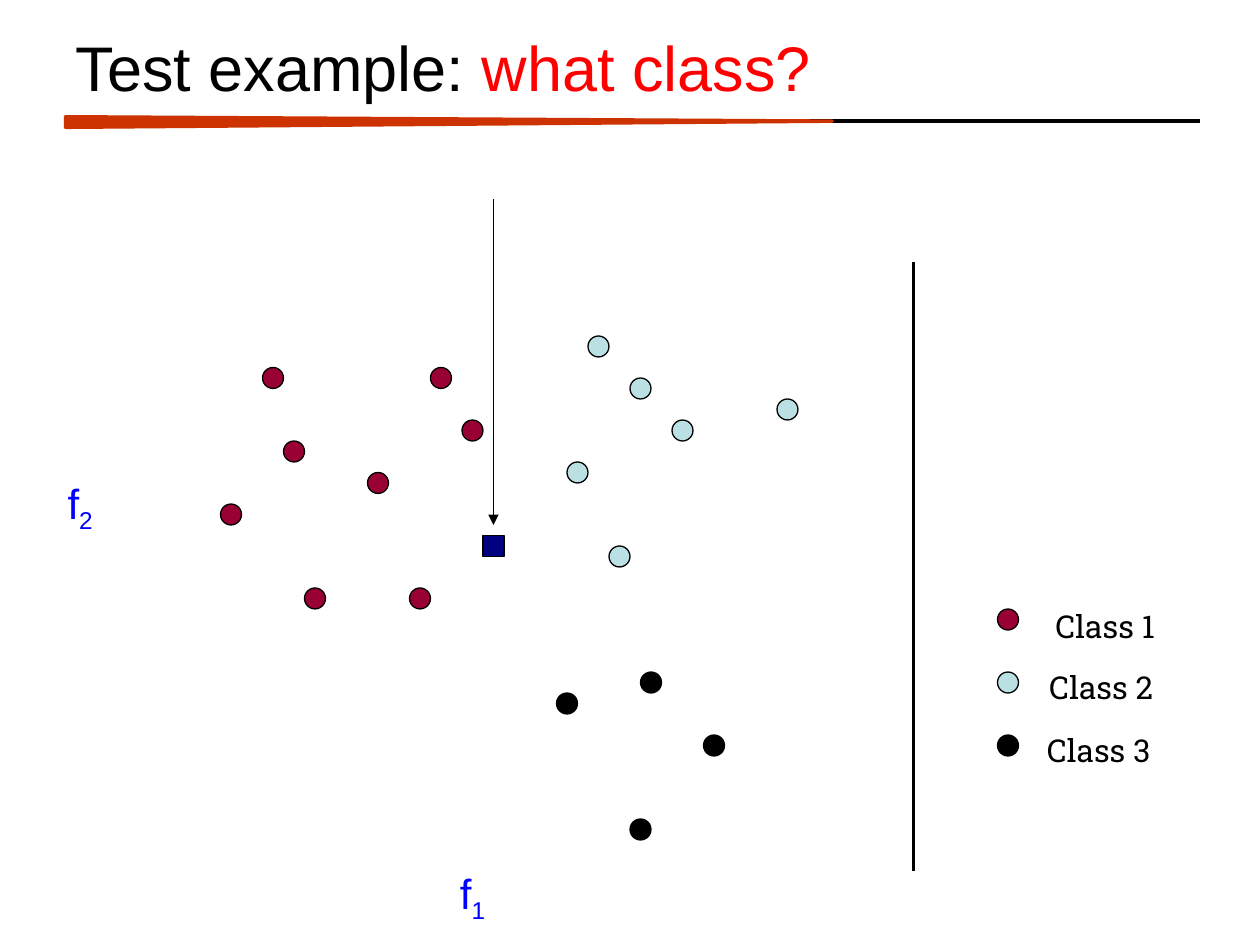
from dataclasses import dataclass

from lxml import etree
from pptx import Presentation
from pptx import util as u
from pptx.dml.color import RGBColor
from pptx.enum import shapes, text
from pptx.oxml.ns import qn

PX = u.Inches(1) // 96
CELL = 8
DOT = 2 * CELL


@dataclass(frozen=True)
class Theme:
    """Colours, fonts and sizes of the deck."""
    ink: str = "000000"
    question: str = "FF0000"
    wedge: str = "CC3300"
    axis: str = "0000FF"
    test: str = "000080"
    classes: tuple = ("990033", "BBE0E3", "000000")
    sans: str = "Arial"
    slab: str = "Roboto Slab"
    title_size: int = 36
    axis_size: int = 24
    legend_size: int = 18
    thin: float = 0.75
    rule: float = 2
    divider: float = 2.25


THEME = Theme()

POINTS = (
    ((4, 16), (6, 23), (8, 37), (20, 16), (0, 29), (14, 26), (23, 21), (18, 37)),
    ((33, 25), (35, 13), (37, 33), (39, 17), (53, 19), (43, 21)),
    ((40, 45), (32, 47), (39, 59), (46, 51)),
)
TEST_POINT = (25, 32)


def px(*lengths):
    """Turn pixel lengths into EMU."""
    return [u.Emu(length * PX) for length in lengths]


def apply(target, values):
    """Set each attribute of target from a dict."""
    for name, value in values.items():
        setattr(target, name, value)


def add_mark(holder, kind, box, fill, line=THEME.ink, width=THEME.thin):
    """Add a filled, outlined preset shape."""
    mark = holder.add_shape(kind, *px(*box))
    mark.shadow.inherit = False
    mark.fill.solid()
    mark.fill.fore_color.rgb = RGBColor.from_string(fill)
    mark.line.color.rgb = RGBColor.from_string(line)
    mark.line.width = u.Pt(width)
    return mark


def add_line(page, start, end, width, arrow=False):
    """Add a straight black line, with an arrowhead at its end if asked."""
    line = page.shapes.add_connector(
        shapes.MSO_CONNECTOR.STRAIGHT, *px(*start, *end))
    line.line.color.rgb = RGBColor.from_string(THEME.ink)
    line.line.width = u.Pt(width)
    properties = line._element.spPr
    if arrow:
        outline = properties.find(qn("a:ln"))
        etree.SubElement(outline, qn("a:tailEnd"), type="triangle")
    etree.SubElement(properties, qn("a:effectLst"))


def add_span(para, words, font, size, color):
    """Add one formatted run to a paragraph."""
    span = para.add_run()
    span.text = words
    apply(span.font, {"name": font, "size": u.Pt(size)})
    span.font.color.rgb = RGBColor.from_string(color)
    return span


def add_label(page, box, wrap):
    """Add a centred text box and return its paragraph."""
    frame = page.shapes.add_textbox(*px(*box)).text_frame
    apply(frame, {"word_wrap": wrap,
                  "auto_size": text.MSO_AUTO_SIZE.SHAPE_TO_FIT_TEXT})
    para = frame.paragraphs[0]
    para.alignment = text.PP_ALIGN.CENTER
    return para


def add_header(page, left, top, width, height):
    """Place the title with its rule and tapering wedge below."""
    add_line(page, (left + 2, top + 76), (left + 866, top + 76), THEME.rule)
    thick, length = 8, 584
    wedge_box = (left + 294 - thick // 2, top + 77 - length // 2, thick, length)
    wedge = add_mark(page.shapes, shapes.MSO_SHAPE.ISOSCELES_TRIANGLE,
                     wedge_box, THEME.wedge, THEME.wedge, THEME.rule)
    wedge.rotation = 90
    wedge.adjustments[0] = 0.417

    title = page.shapes.title
    apply(title, dict(zip(("left", "top", "width", "height"),
                          px(left, top, width, height))))
    apply(title.text_frame, {"vertical_anchor": text.MSO_ANCHOR.MIDDLE,
                             "word_wrap": True,
                             "auto_size": text.MSO_AUTO_SIZE.NONE})
    para = title.text_frame.paragraphs[0]
    para.alignment = text.PP_ALIGN.LEFT
    for words, color in (("Test example: ", THEME.ink),
                         ("what class?", THEME.question)):
        add_span(para, words, THEME.sans, THEME.title_size, color)


def add_scatter(page, left, top):
    """Place the class dots, the test square and its arrow on a cell grid."""
    def spot(column, row):
        """Give the position of a grid cell."""
        return left + column * CELL, top + row * CELL

    dots = page.shapes.add_group_shape().shapes
    for color, points in zip(THEME.classes, POINTS):
        for point in points:
            add_mark(dots, shapes.MSO_SHAPE.OVAL,
                     (*spot(*point), DOT, DOT), color)
    add_mark(dots, shapes.MSO_SHAPE.RECTANGLE,
             (*spot(*TEST_POINT), DOT, DOT), THEME.test)
    column, row = TEST_POINT
    add_line(page, spot(column + 1, 0), spot(column + 1, row - 1),
             THEME.thin, arrow=True)


def add_axis_name(page, left, top, index):
    """Place a feature name with its subscript."""
    para = add_label(page, (left, top, 128, 48), wrap=True)
    for words, baseline in (("f", 0), (index, -25000)):
        span = add_span(para, words, THEME.sans, THEME.axis_size, THEME.axis)
        if baseline:
            span._r.get_or_add_rPr().set("baseline", str(baseline))


def add_legend(page, left, top, height):
    """Place the divider and one dot and name for each class."""
    add_line(page, (left, top), (left, top + height), THEME.divider)
    label_spots = ((93, 258), (90, 304), (88, 352))
    for index, (color, (x, y)) in enumerate(zip(THEME.classes, label_spots)):
        add_mark(page.shapes, shapes.MSO_SHAPE.OVAL,
                 (left + 64, top + 264 + 48 * index, DOT, DOT), color)
        para = add_label(page, (left + x, top + y, 106, 34), wrap=False)
        add_span(para, f"Class {index + 1}", THEME.slab,
                 THEME.legend_size, THEME.ink)


def main():
    """Build and save the deck."""
    deck = Presentation()
    apply(deck, dict(zip(("slide_width", "slide_height"), px(960, 720))))
    page = deck.slides.add_slide(deck.slide_layouts.get_by_name("Title Only"))
    add_header(page, 48, 16, 864, 69)
    add_scatter(page, 168, 152)
    add_legend(page, 696, 200, 464)
    add_axis_name(page, 296, 656, "1")
    add_axis_name(page, -3, 359, "2")
    deck.save("out.pptx")


if __name__ == "__main__":
    main()
